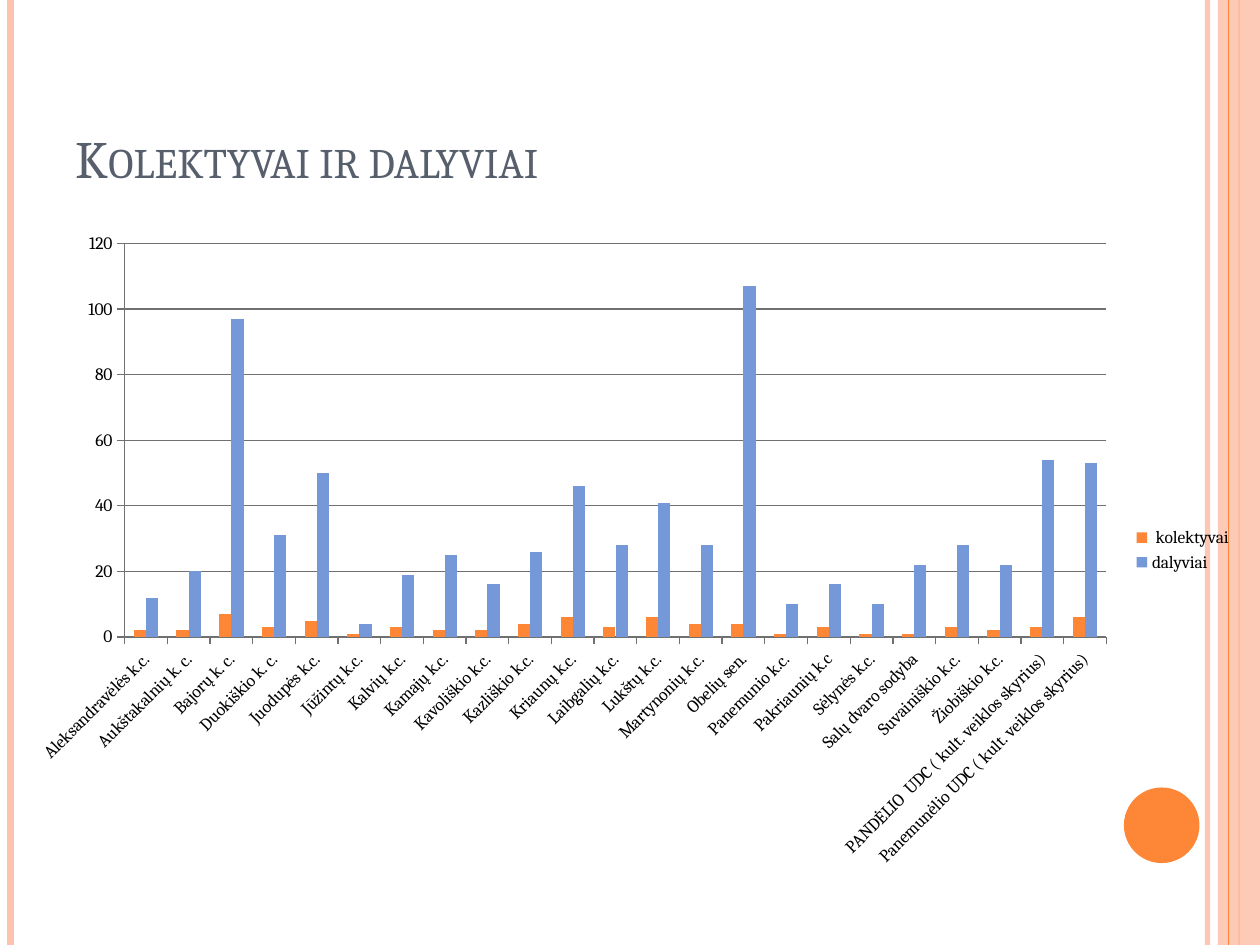
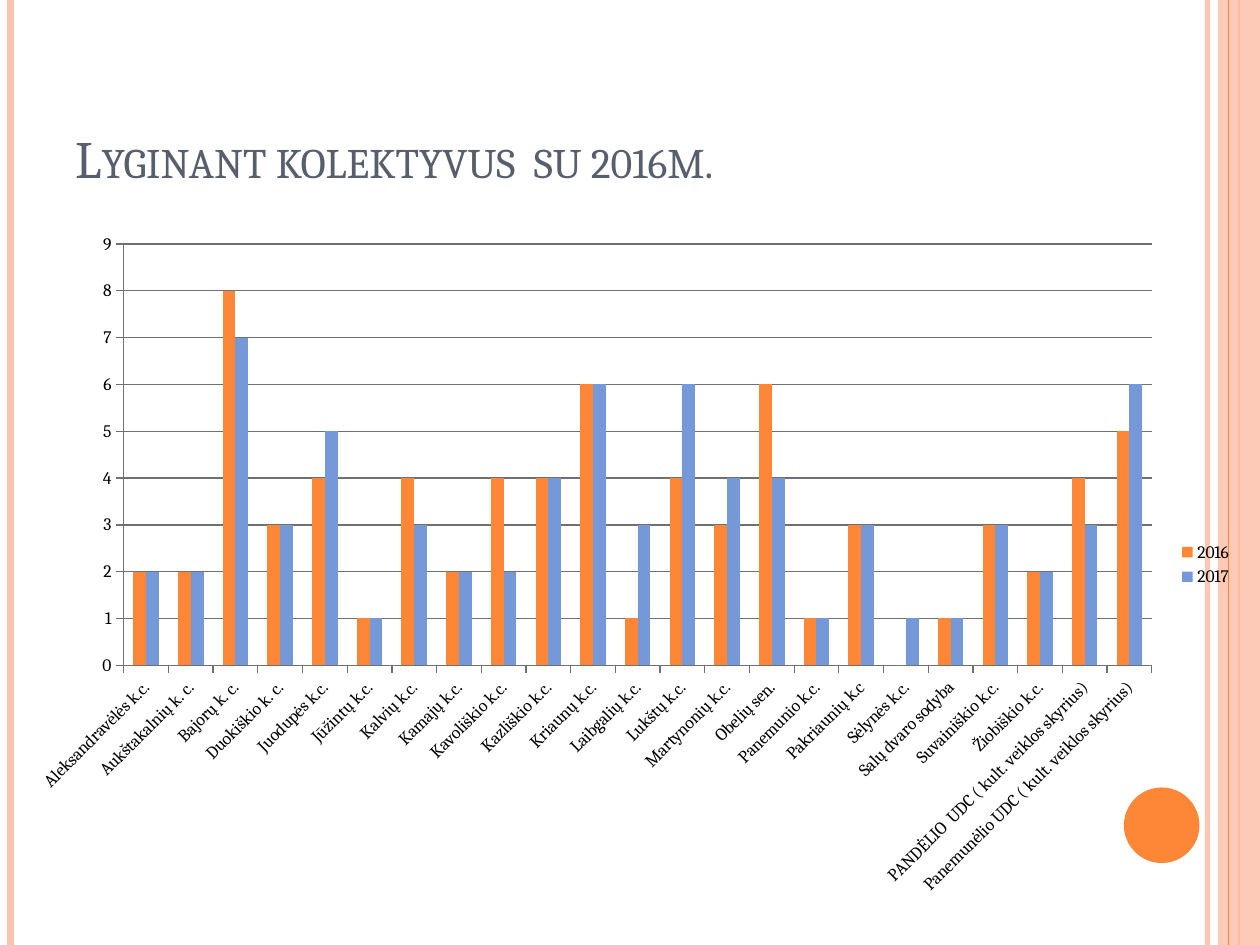
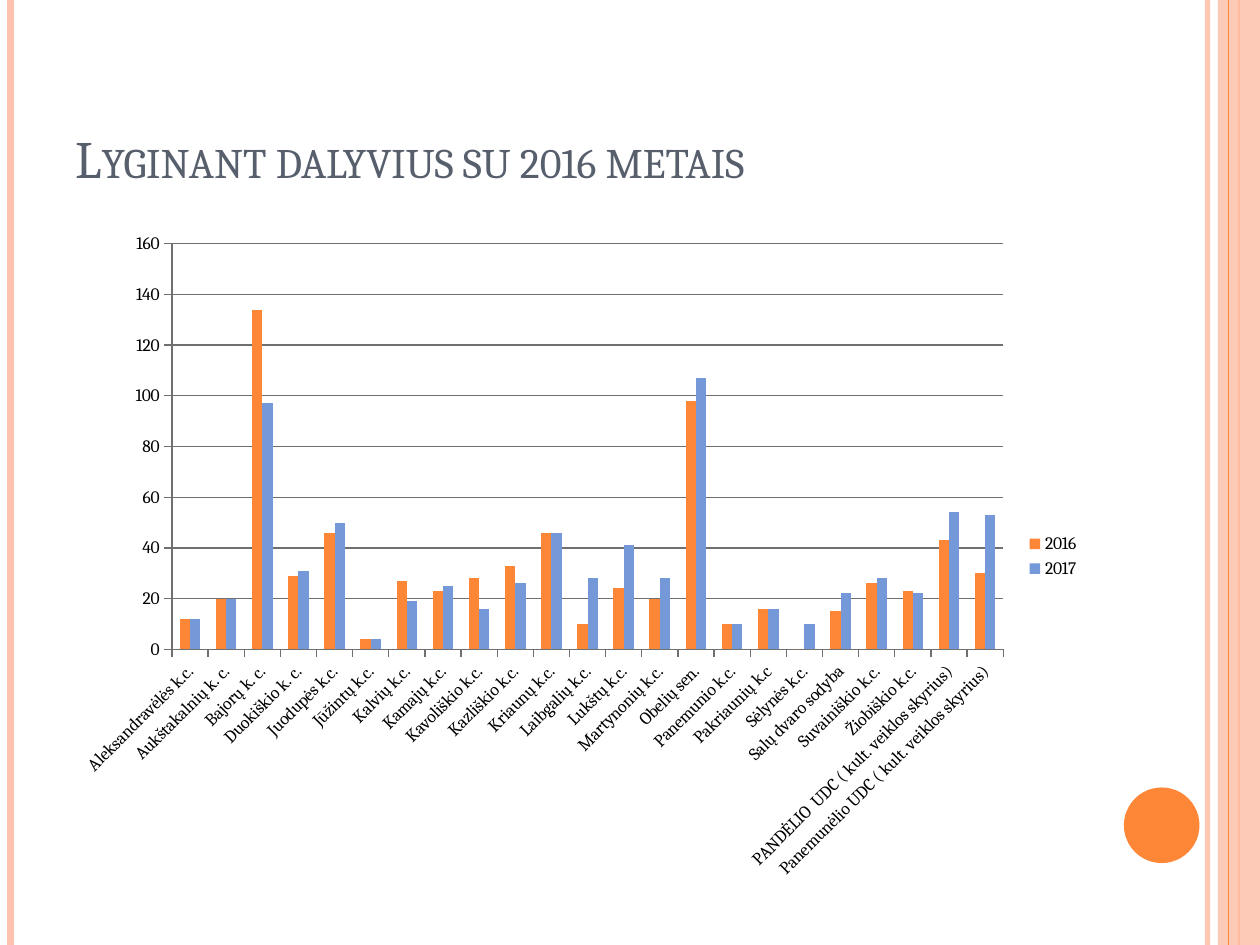
"""Build three slides that chart groups and their members."""
from lxml.etree import SubElement
from pptx import Presentation
from pptx.chart.data import CategoryChartData
from pptx.dml.color import RGBColor
from pptx.enum.chart import XL_CHART_TYPE, XL_LEGEND_POSITION, XL_TICK_MARK
from pptx.enum.shapes import MSO_CONNECTOR, MSO_SHAPE
from pptx.enum.text import MSO_ANCHOR
from pptx.oxml.ns import qn
from pptx.util import Pt

PEACH = RGBColor(0xFE, 0xC3, 0xAE)
ORANGE = RGBColor(0xFE, 0x86, 0x37)
BLUE = RGBColor(0x75, 0x98, 0xD9)
SLATE = RGBColor(0x57, 0x5F, 0x6D)
GREY = RGBColor(0x70, 0x70, 0x70)
BLACK = RGBColor(0, 0, 0)
FONT = "Cambria"
WIDTH, HEIGHT = 720, 540

PLACES = [
    "Aleksandravėlės k.c.", "Aukštakalnių k. c.", "Bajorų k. c.",
    "Duokiškio k. c.", "Juodupės k.c.", "Jūžintų k.c.", "Kalvių k.c.",
    "Kamajų k.c.", "Kavoliškio k.c.", "Kazliškio k.c.", "Kriaunų k.c.",
    "Laibgalių k.c.", "Lukštų k.c.", "Martynonių k.c.", "Obelių sen.",
    "Panemunio k.c.", "Pakriaunių k.c", "Sėlynės k.c.", "Salų dvaro sodyba",
    "Suvainiškio k.c.", "Žiobiškio k.c.",
    "PANDĖLIO  UDC ( kult. veiklos skyrius)",
    "Panemunėlio UDC ( kult. veiklos skyrius)",
]
GROUPS_16 = [2, 2, 8, 3, 4, 1, 4, 2, 4, 4, 6, 1, 4, 3, 6, 1, 3, 0, 1, 3, 2, 4, 5]
GROUPS_17 = [2, 2, 7, 3, 5, 1, 3, 2, 2, 4, 6, 3, 6, 4, 4, 1, 3, 1, 1, 3, 2, 3, 6]
PEOPLE_16 = [12, 20, 134, 29, 46, 4, 27, 23, 28, 33, 46, 10, 24, 20, 98, 10, 16,
             0, 15, 26, 23, 43, 30]
PEOPLE_17 = [12, 20, 97, 31, 50, 4, 19, 25, 16, 26, 46, 28, 41, 28, 107, 10, 16,
             10, 22, 28, 22, 54, 53]

WIDE = (8.64, 126, 702.72)
SLIM = (36, 126, 588.24)
PAGES = [
    ("Kolektyvai ir dalyviai", (*WIDE, 376.56), 120, 20,
     {" kolektyvai": GROUPS_17, "dalyviai": PEOPLE_17}),
    ("Lyginant kolektyvus  su 2016m.", (*WIDE, 393.12), 9, 1,
     {"2016": GROUPS_16, "2017": GROUPS_17}),
    ("Lyginant dalyvius su 2016 metais", (*SLIM, 383.76), 160, 20,
     {"2016": PEOPLE_16, "2017": PEOPLE_17}),
]


def fade(shape, share):
    """Make every colour of a shape opaque to the given percentage."""
    for tint in list(shape._element.spPr.iter(qn("a:srgbClr"))):
        SubElement(tint, qn("a:alpha")).set("val", str(share * 1000))


def add_stripe(slide, left, color, weight):
    """Draw a line down the full height of the slide."""
    line = slide.shapes.add_connector(
        MSO_CONNECTOR.STRAIGHT, Pt(left), Pt(0), Pt(left), Pt(HEIGHT))
    line.line.color.rgb = color
    line.line.width = Pt(weight)
    SubElement(line._element.spPr, qn("a:effectLst"))
    return line


def add_block(slide, kind, box, color):
    """Draw a filled shape without outline or shadow."""
    shape = slide.shapes.add_shape(kind, *map(Pt, box))
    shape.shadow.inherit = False
    shape.fill.solid()
    shape.fill.fore_color.rgb = color
    shape.line.fill.background()
    return shape


def add_frame(slide):
    """Draw the stripes, side band and dot that all slides share."""
    fade(add_stripe(slide, 690, PEACH, 3), 93)
    add_stripe(slide, 6, PEACH, 4.5)
    add_stripe(slide, 708, ORANGE, 1.5)
    fade(add_block(slide, MSO_SHAPE.RECTANGLE, (696, 0, 24, HEIGHT), PEACH), 87)
    add_stripe(slide, 702, ORANGE, 0.75)
    add_block(slide, MSO_SHAPE.OVAL, (642.24, 450, 43.2, 43.2), ORANGE)


def add_title(slide, text):
    """Add the heading in small capitals."""
    box = slide.shapes.add_textbox(Pt(36), Pt(21.6), Pt(588.24), Pt(90))
    frame = box.text_frame
    frame.word_wrap = True
    frame.vertical_anchor = MSO_ANCHOR.BOTTOM
    run = frame.paragraphs[0].add_run()
    run.text = text
    run.font.name = FONT
    run.font.size = Pt(30)
    run.font.color.rgb = SLATE
    run.font._element.set("cap", "small")


def style_axis(axis):
    """Give an axis a thin grey line and outer ticks."""
    axis.major_tick_mark = XL_TICK_MARK.OUTSIDE
    axis.minor_tick_mark = XL_TICK_MARK.NONE
    axis.format.line.color.rgb = GREY
    axis.format.line.width = Pt(0.75)


def add_columns(slide, box, top, step, series):
    """Add a clustered column chart of all places."""
    data = CategoryChartData()
    data.categories = PLACES
    for name, values in series.items():
        data.add_series(name, values)
    chart = slide.shapes.add_chart(
        XL_CHART_TYPE.COLUMN_CLUSTERED, *map(Pt, box), data).chart
    chart.has_title = False
    chart.font.name = FONT
    chart.font.size = Pt(10)
    chart.font.color.rgb = BLACK
    chart.has_legend = True
    chart.legend.position = XL_LEGEND_POSITION.RIGHT
    chart.legend.include_in_layout = False

    plot = chart.plots[0]
    plot.gap_width = 150
    plot.vary_by_categories = False
    for bars, color in zip(plot.series, (ORANGE, BLUE)):
        bars.format.fill.solid()
        bars.format.fill.fore_color.rgb = color

    names, scale = chart.category_axis, chart.value_axis
    style_axis(names)
    style_axis(scale)
    names.tick_labels.font.size = Pt(10)
    body = names._element.find(qn("c:txPr")).find(qn("a:bodyPr"))
    body.set("rot", "-2700000")
    scale.minimum_scale = 0
    scale.maximum_scale = top
    scale.major_unit = step
    scale.has_major_gridlines = True
    grid = scale.major_gridlines.format.line
    grid.color.rgb = GREY
    grid.width = Pt(0.75)


def main():
    """Build and save the slides."""
    deck = Presentation()
    deck.slide_width, deck.slide_height = Pt(WIDTH), Pt(HEIGHT)
    for title, box, top, step, series in PAGES:
        slide = deck.slides.add_slide(deck.slide_layouts[6])
        add_frame(slide)
        add_title(slide, title)
        add_columns(slide, box, top, step, series)
    deck.save("out.pptx")


if __name__ == "__main__":
    main()
